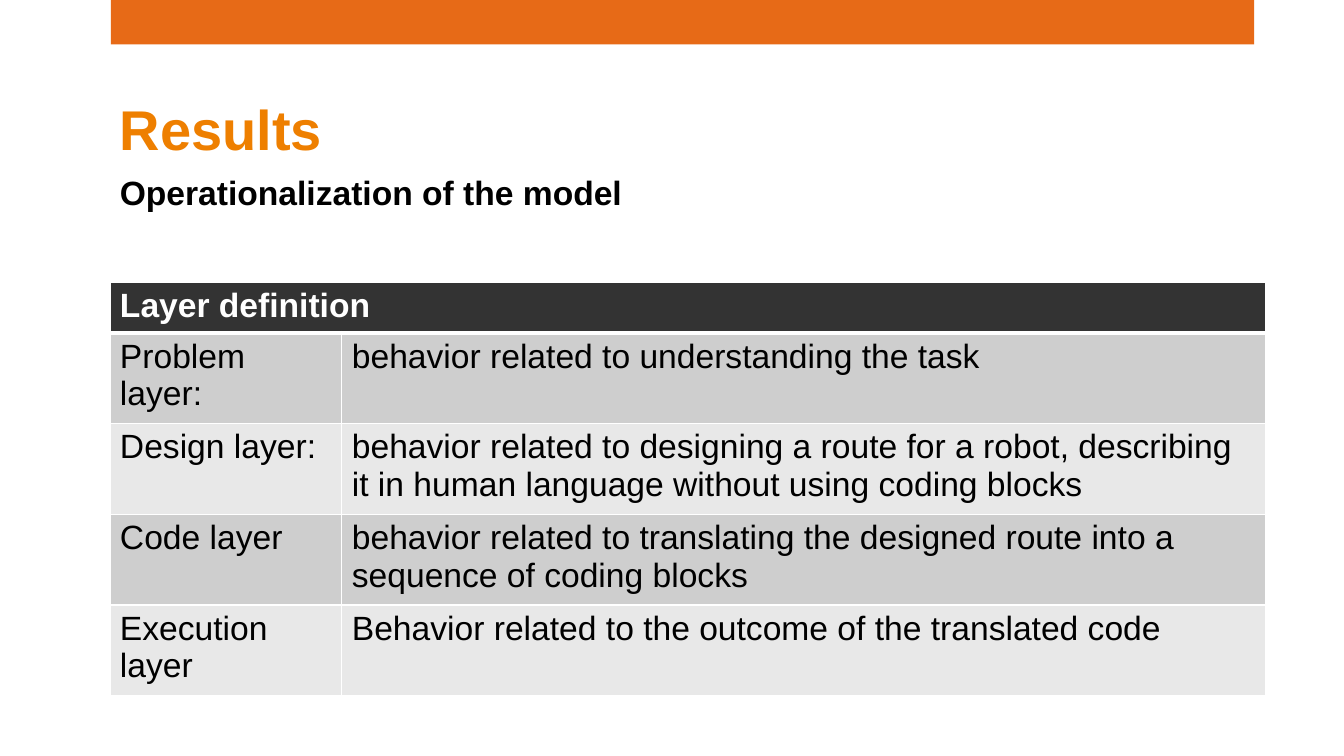
"""Build the results slide with its table of layer definitions."""
from dataclasses import dataclass

from lxml.etree import SubElement
from pptx import Presentation
from pptx.dml.color import RGBColor
from pptx.enum.shapes import MSO_SHAPE
from pptx.enum.text import MSO_ANCHOR
from pptx.oxml.ns import qn
from pptx.util import Inches, Pt

HUES = {
    "bar": "E76A17", "title": "EE7F00", "head": "333333",
    "dark": "CECECE", "light": "E8E8E8", "white": "FFFFFF", "black": "000000",
}


@dataclass
class Label:
    """A line of bold text in its own box."""
    text: str
    top: float
    height: float
    size: int
    hue: str
    anchor: MSO_ANCHOR


@dataclass
class Layer:
    """A table row that defines one layer."""
    name: str
    meaning: str


LABELS = [
    Label("Results", 0.94, 0.71, 40, "title", MSO_ANCHOR.BOTTOM),
    Label("Operationalization of the model", 1.66, 0.39, 24, "black", MSO_ANCHOR.TOP),
]
LAYERS = [
    Layer("Problem layer:", "behavior related to understanding the task"),
    Layer("Design layer:", "behavior related to designing a route for a robot, "
          "describing it in human language without using coding blocks"),
    Layer("Code layer", "behavior related to translating the designed route "
          "into a sequence of coding blocks"),
    Layer("Execution layer", "Behavior related to the outcome of the translated code"),
]
LEFT = 1.09
WIDTHS = (2.3, 9.16)


def color(hue: str) -> RGBColor:
    """Look up a colour by name."""
    return RGBColor.from_string(HUES[hue])


def style(para, size: int, hue: str, bold: bool) -> None:
    """Set the font of a paragraph."""
    font = para.font
    font.name, font.size, font.bold = "Arial", Pt(size), bold
    font.color.rgb = color(hue)


def draw_bar(slide) -> None:
    """Draw the band along the top edge."""
    bar = slide.shapes.add_shape(
        MSO_SHAPE.RECTANGLE, Inches(1.1), 0, Inches(11.34), Inches(0.44))
    bar.shadow.inherit = False
    bar.fill.solid()
    bar.fill.fore_color.rgb = color("bar")
    bar.line.fill.background()


def draw_label(slide, label: Label) -> None:
    """Draw a line of bold text."""
    box = slide.shapes.add_textbox(
        Inches(LEFT), Inches(label.top), Inches(11.35), Inches(label.height))
    frame = box.text_frame
    frame.word_wrap = True
    frame.vertical_anchor = label.anchor
    frame.text = label.text
    style(frame.paragraphs[0], label.size, label.hue, True)


def fill_cell(cell, text: str, fill: str, hue: str, head: bool, top: int) -> None:
    """Give a cell its text, white borders and fill."""
    cell.text = text
    style(cell.text_frame.paragraphs[0], 24, hue, head)
    props = cell._tc.get_or_add_tcPr()
    for side, width in zip("LRTB", (1, 1, top, 3 if head else 1)):
        line = SubElement(props, qn(f"a:ln{side}"), w=str(Pt(width)))
        solid = SubElement(line, qn("a:solidFill"))
        SubElement(solid, qn("a:srgbClr"), val=HUES["white"])
    cell.fill.solid()
    cell.fill.fore_color.rgb = color(fill)


def draw_table(slide) -> None:
    """Draw the table of layers."""
    count = len(LAYERS) + 1
    table = slide.shapes.add_table(
        count, len(WIDTHS), Inches(LEFT), Inches(2.8),
        Inches(sum(WIDTHS)), Inches(0.41 * count)).table
    for column, width in zip(table.columns, WIDTHS):
        column.width = Inches(width)
    table.cell(0, 0).merge(table.cell(0, 1))
    for col, text in enumerate(("Layer definition", "")):
        fill_cell(table.cell(0, col), text, "head", "white", True, 1)
    for row, layer in enumerate(LAYERS, 1):
        fill = "dark" if row % 2 else "light"
        for col, text in enumerate((layer.name, layer.meaning)):
            fill_cell(table.cell(row, col), text, fill, "black", False,
                      3 if row == 1 else 1)


def main() -> None:
    """Build and save the slide."""
    deck = Presentation()
    deck.slide_width, deck.slide_height = Inches(13.33), Inches(7.5)
    slide = deck.slides.add_slide(deck.slide_layouts[6])
    draw_bar(slide)
    for label in LABELS:
        draw_label(slide, label)
    draw_table(slide)
    deck.save("out.pptx")


if __name__ == "__main__":
    main()
